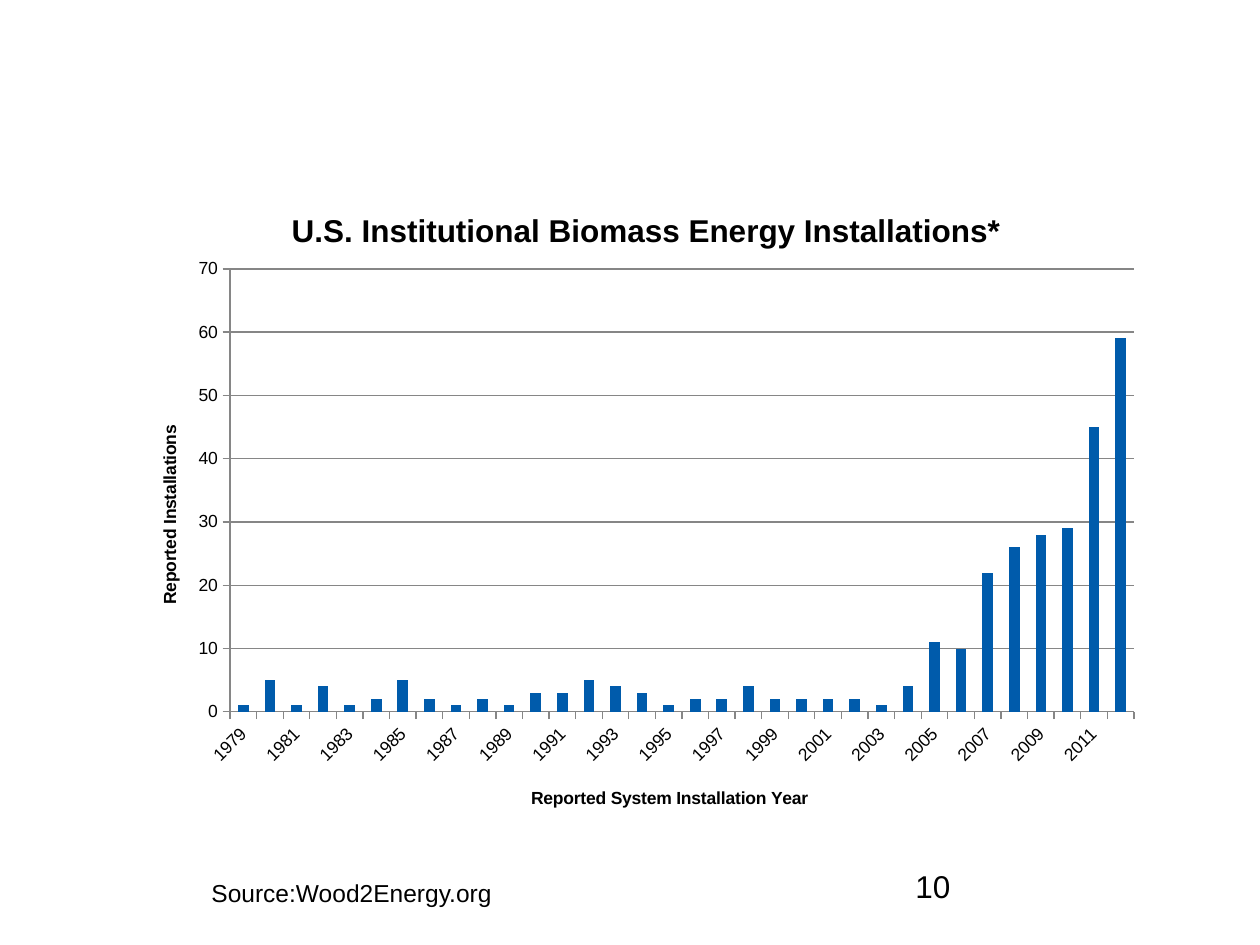
from lxml.etree import SubElement
from pptx import Presentation
from pptx.chart.data import CategoryChartData
from pptx.dml.color import RGBColor
from pptx.enum.chart import XL_CHART_TYPE, XL_TICK_MARK
from pptx.oxml import parse_xml
from pptx.oxml.ns import qn
from pptx.util import Emu, Pt

SCALE = 914400 / 126
FONT = "Arial"
BLACK = "000000"
GRAY = "868686"
BLUE = "005BAB"
AREA = (126, 179, 1029, 651)
YEARS = range(1979, 2013)
COUNTS = [1, 5, 1, 4, 1, 2, 5, 2, 1, 2, 1, 3, 3, 5, 4, 3, 1,
          2, 2, 4, 2, 2, 2, 2, 1, 4, 11, 10, 22, 26, 28, 29, 45, 59]


def px(num):
    return Emu(round(num * SCALE))


def color(code):
    return RGBColor.from_string(code)


def style(font, size, bold=False, code=BLACK):
    font.name = FONT
    font.size = Pt(size)
    font.bold = bold
    font.color.rgb = color(code)


def put_text(frame, text, **look):
    para = frame.paragraphs[0]
    run = para.add_run()
    run.text = text
    style(run.font, **look)


def add_label(slide, box, text, size):
    frame = slide.shapes.add_textbox(*map(px, box)).text_frame
    frame.word_wrap = True
    put_text(frame, text, size=size)


def place(node, index, left, top, size=None):
    for old in node.findall(qn("c:layout")):
        node.remove(old)
    layout = parse_xml(
        '<c:layout xmlns:c="http://schemas.openxmlformats.org/drawingml/2006/chart"/>')
    manual = SubElement(layout, qn("c:manualLayout"))
    parts = [("layoutTarget", "inner")] if size else []
    parts += [("xMode", "edge"), ("yMode", "edge"),
              ("x", round((left - AREA[0]) / AREA[2], 4)),
              ("y", round((top - AREA[1]) / AREA[3], 4))]
    if size:
        parts += [("w", round(size[0] / AREA[2], 4)),
                  ("h", round(size[1] / AREA[3], 4))]
    for name, value in parts:
        SubElement(manual, qn("c:" + name)).set("val", str(value))
    node.insert(index, layout)


def set_title(title, text, size, left, top):
    put_text(title.text_frame, text, size=size, bold=True)
    place(title._element, 1, left, top)


def set_line(line):
    line.color.rgb = color(GRAY)
    line.width = Pt(0.75)


def set_axis(axis, text, left, top):
    axis.major_tick_mark = XL_TICK_MARK.OUTSIDE
    axis.minor_tick_mark = XL_TICK_MARK.NONE
    set_line(axis.format.line)
    style(axis.tick_labels.font, 10)
    set_title(axis.axis_title, text, 10, left, top)


def add_bars(slide):
    data = CategoryChartData()
    data.categories = [str(year) for year in YEARS]
    data.add_series("Series 1", COUNTS)
    frame = slide.shapes.add_chart(
        XL_CHART_TYPE.COLUMN_CLUSTERED, *map(px, AREA), data)
    chart = frame.chart
    style(chart.font, 10)
    chart.has_legend = False
    set_title(chart.chart_title,
              "U.S. Institutional Biomass Energy Installations*", 18, 286, 204)

    plot = chart.plots[0]
    plot.vary_by_categories = False
    plot.gap_width = 150
    fill = plot.series[0].format.fill
    fill.solid()
    fill.fore_color.rgb = color(BLUE)

    years, counts = chart.category_axis, chart.value_axis
    set_axis(years, "Reported System Installation Year", 528, 783)
    set_axis(counts, "Reported Installations", 155, 422)
    counts.minimum_scale, counts.maximum_scale = 0, 70
    counts.major_unit = 10
    set_line(counts.major_gridlines.format.line)

    node = years._element
    node.find(qn("c:txPr")).find(qn("a:bodyPr")).set("rot", "-2700000")
    last = node.find(qn("c:noMultiLvlLbl"))
    for name, step in (("tickLblSkip", 2), ("tickMarkSkip", 1)):
        skip = SubElement(node, qn("c:" + name))
        skip.set("val", str(step))
        last.addprevious(skip)
    place(chart._chartSpace.chart.plotArea, 0, 230, 269, (904, 443))


def main():
    deck = Presentation()
    deck.slide_width, deck.slide_height = px(1260), px(945)
    slide = deck.slides.add_slide(deck.slide_layouts[6])
    add_label(slide, (903, 861, 294, 63), "10", 18)
    add_bars(slide)
    add_label(slide, (199, 872, 462, 43), "Source:Wood2Energy.org", 14)
    deck.save("out.pptx")


if __name__ == "__main__":
    main()
